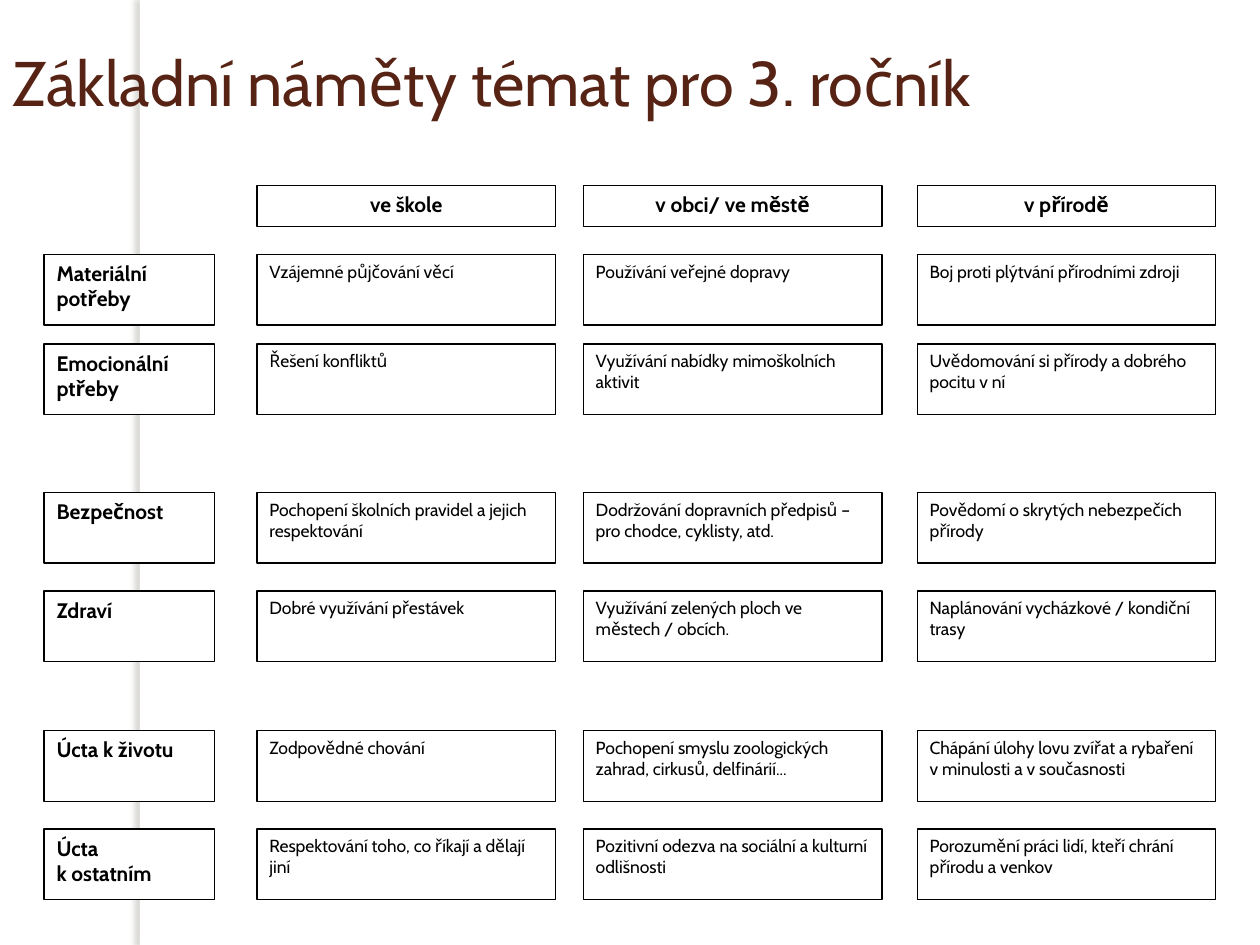
from lxml import etree
from pptx import Presentation
from pptx.dml.color import RGBColor
from pptx.enum import shapes, text
from pptx.util import Inches, Pt

COLORS = {"paper": "FFFFFF", "ink": "000000", "title": "572314", "shadow": "736F63"}
FONT = "Cabin"
DRAWING = "http://schemas.openxmlformats.org/drawingml/2006/main"

COLUMNS = [(0.35, 1.35), (2.04, 2.37), (4.63, 2.37), (7.28, 2.37)]
HEADER_TOP, HEADER_HEIGHT = 1.47, 0.33
ROW_TOPS = [2.02, 2.73, 3.91, 4.69, 5.8, 6.58]
ROW_HEIGHT = 0.56

HEADERS = ["ve škole", "v obci/ ve městě", "v přírodě"]
TOPICS = [
    ["Materiální potřeby", "Vzájemné půjčování věcí",
     "Používání veřejné dopravy", "Boj proti plýtvání přírodními zdroji"],
    ["Emocionální ptřeby", "Řešení konfliktů",
     "Využívání nabídky mimoškolních aktivit",
     "Uvědomování si přírody a dobrého pocitu v ní"],
    ["Bezpečnost", "Pochopení školních pravidel a jejich respektování",
     "Dodržování dopravních předpisů – pro chodce, cyklisty, atd.",
     "Povědomí o skrytých nebezpečích přírody"],
    ["Zdraví", "Dobré využívání přestávek",
     "Využívání zelených ploch ve městech / obcích.",
     "Naplánování vycházkové / kondiční trasy"],
    ["Úcta k životu", "Zodpovědné chování",
     "Pochopení smyslu zoologických zahrad, cirkusů, delfinárií...",
     "Chápání úlohy lovu zvířat a rybaření v minulosti a v současnosti"],
    ["Úcta\nk ostatním", "Respektování toho, co říkají a dělají jiní",
     "Pozitivní odezva na sociální a kulturní odlišnosti",
     "Porozumění práci lidí, kteří chrání přírodu a venkov"],
]

HEADER = {"size": 12, "bold": True, "align": text.PP_ALIGN.CENTER}
LABEL = {"size": 12, "bold": True, "align": text.PP_ALIGN.JUSTIFY}
TOPIC = {"size": 10, "bold": False, "align": text.PP_ALIGN.LEFT}


def write(box, words, style, color, anchor):
    frame = box.text_frame
    frame.text = words
    for name, value in {"word_wrap": True, "vertical_anchor": anchor,
                        "auto_size": text.MSO_AUTO_SIZE.NONE}.items():
        setattr(frame, name, value)
    for para in frame.paragraphs:
        para.alignment = style["align"]
        for span in para.runs:
            for name, value in {"name": FONT, "size": Pt(style["size"]),
                                "bold": style["bold"]}.items():
                setattr(span.font, name, value)
            span.font.color.rgb = RGBColor.from_string(COLORS[color])


def add_box(page, left, top, width, height):
    box = page.shapes.add_shape(shapes.MSO_SHAPE.RECTANGLE,
                                *map(Inches, (left, top, width, height)))
    box.shadow.inherit = False
    box.fill.solid()
    box.fill.fore_color.rgb = RGBColor.from_string(COLORS["paper"])
    box.line.color.rgb = RGBColor.from_string(COLORS["ink"])
    box.line.width = Pt(0.75)
    return box


deck = Presentation()
deck.slide_width, deck.slide_height = Inches(10), Inches(7.5)
page = deck.slides.add_slide(deck.slide_layouts[5])

strip = add_box(page, 1.11, 0, 0.08, 7.5)
strip.line.fill.background()
effects = strip.element.spPr.find(f"{{{DRAWING}}}effectLst")
shadow = etree.SubElement(effects, f"{{{DRAWING}}}outerShdw", blurRad=str(Pt(3)),
                          dist=str(Pt(3)), dir=str(180 * 60000), rotWithShape="0")
tint = etree.SubElement(shadow, f"{{{DRAWING}}}srgbClr", val=COLORS["shadow"])
etree.SubElement(tint, f"{{{DRAWING}}}alpha", val="25000")

title = page.shapes.title
strip.element.addnext(title.element)
for name, value in {"left": 0, "top": 0.3, "width": 9.45, "height": 0.69}.items():
    setattr(title, name, Inches(value))
write(title, "Základní náměty témat pro 3. ročník",
      {"size": 36, "bold": False, "align": text.PP_ALIGN.LEFT}, "title",
      text.MSO_ANCHOR.MIDDLE)

for (left, width), words in zip(COLUMNS[1:], HEADERS):
    box = add_box(page, left, HEADER_TOP, width, HEADER_HEIGHT)
    write(box, words, HEADER, "ink", text.MSO_ANCHOR.TOP)

for top, row in zip(ROW_TOPS, TOPICS):
    for column, ((left, width), words) in enumerate(zip(COLUMNS, row)):
        box = add_box(page, left, top, width, ROW_HEIGHT)
        write(box, words, TOPIC if column else LABEL, "ink", text.MSO_ANCHOR.TOP)

deck.save("out.pptx")
